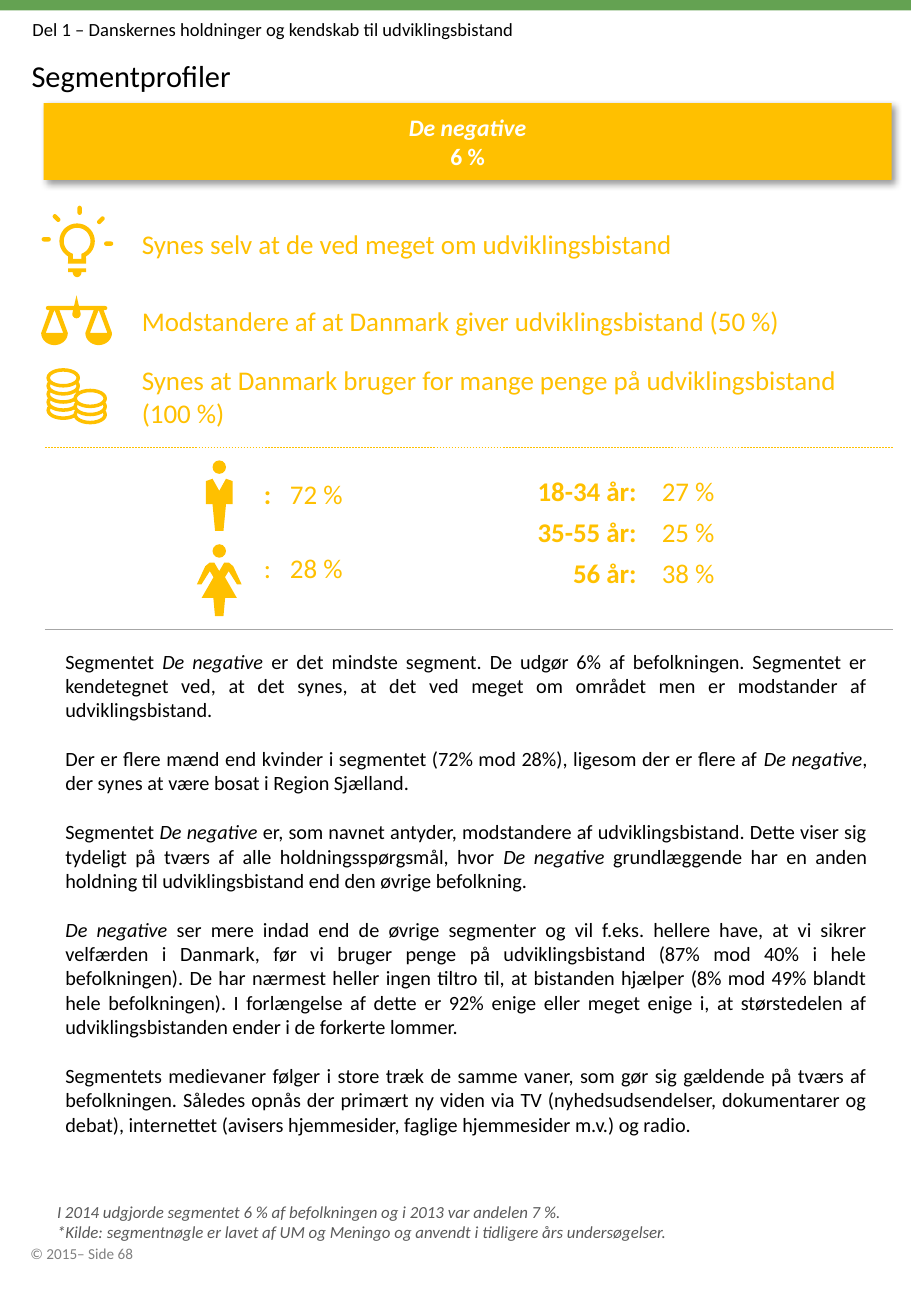
from dataclasses import dataclass
from math import cos, radians, sin

from lxml.etree import SubElement
from pptx import Presentation
from pptx.dml.color import RGBColor
from pptx.enum.dml import MSO_LINE
from pptx.enum.shapes import MSO_CONNECTOR, MSO_SHAPE
from pptx.enum.text import MSO_ANCHOR, PP_ALIGN
from pptx.oxml.ns import qn
from pptx.util import Pt


@dataclass(frozen=True)
class Theme:
    """Colours, font and type sizes of the slide."""

    font: str = "Calibri"
    green: RGBColor = RGBColor(0x64, 0xA2, 0x52)
    gold: RGBColor = RGBColor(0xFF, 0xC0, 0x00)
    white: RGBColor = RGBColor(0xFF, 0xFF, 0xFF)
    black: RGBColor = RGBColor(0, 0, 0)
    dark_grey: RGBColor = RGBColor(0x59, 0x59, 0x59)
    grey: RGBColor = RGBColor(0x80, 0x80, 0x80)
    light_grey: RGBColor = RGBColor(0xA6, 0xA6, 0xA6)
    title: int = 18
    fact: int = 16
    banner: int = 14
    body: int = 12
    header: int = 11
    note: int = 10
    footer: int = 9


THEME = Theme()
SEGMENT = "De negative"
FACTS = [
    (144.4, "Synes selv at de ved meget om udviklingsbistand"),
    (189.8, "Modstandere af at Danmark giver udviklingsbistand (50 %)"),
    (234.7, "Synes at Danmark bruger for mange penge på udviklingsbistand (100 %)"),
]
AGES = [("18-34 år:", "27 %"), ("35-55 år:", "25 %"), ("56 år:", "38 %")]
BODY = [
    "Segmentet De negative er det mindste segment. De udgør 6% af befolkningen. Segmentet er kendetegnet ved, at det synes, at det ved meget om området men er modstander af udviklingsbistand.",
    "Der er flere mænd end kvinder i segmentet (72% mod 28%), ligesom der er flere af De negative, der synes at være bosat i Region Sjælland.",
    "Segmentet De negative er, som navnet antyder, modstandere af udviklingsbistand. Dette viser sig tydeligt på tværs af alle holdningsspørgsmål, hvor De negative grundlæggende har en anden holdning til udviklingsbistand end den øvrige befolkning.",
    "De negative ser mere indad end de øvrige segmenter og vil f.eks. hellere have, at vi sikrer velfærden i Danmark, før vi bruger penge på udviklingsbistand (87% mod 40% i hele befolkningen). De har nærmest heller ingen tiltro til, at bistanden hjælper (8% mod 49% blandt hele befolkningen). I forlængelse af dette er 92% enige eller meget enige i, at størstedelen af udviklingsbistanden ender i de forkerte lommer.",
    "Segmentets medievaner følger i store træk de samme vaner, som gør sig gældende på tværs af befolkningen. Således opnås der primært ny viden via TV (nyhedsudsendelser, dokumentarer og debat), internettet (avisers hjemmesider, faglige hjemmesider m.v.) og radio.",
]
NOTES = [
    "I 2014 udgjorde segmentet 6 % af befolkningen og i 2013 var andelen 7 %.",
    "*Kilde: segmentnøgle er lavet af UM og Meningo og anvendt i tidligere års undersøgelser.",
]
MAN = [(0, 290.9), (4, 283.7), (7.9, 285.1), (7.9, 298.8), (4, 298.8), (2.5, 314.6)]
WOMAN = [(0, 338.4), (2.9, 333.4), (5.8, 333.4), (8.3, 335.5), (13.3, 346.3), (10.6, 346.3),
         (5.6, 338.4), (3.4, 342), (10.4, 354.2), (3.5, 354.2), (2.5, 365)]
BULB_RAYS = [(33.5, 129.2, 45), (27.4, 141.8, 0), (64.4, 144.4, 0), (59.8, 130.5, -45), (47.2, 124.6, 90)]


def write_paragraph(paragraph, runs, size, color, align=PP_ALIGN.LEFT, before=0):
    """Fill a paragraph with (text, bold, italic) runs."""
    paragraph.alignment = align
    paragraph.space_before = Pt(before)
    for text, bold, italic in runs:
        run = paragraph.add_run()
        run.text = text
        font = run.font
        font.name, font.size, font.bold, font.italic = THEME.font, Pt(size), bold, italic
        font.color.rgb = color


def add_text(slide, box, paragraphs, size, color, align=PP_ALIGN.LEFT,
             anchor=MSO_ANCHOR.TOP, inset=(7.2, 3.6), gap=0):
    """Add a wrapping text box with one list of runs per paragraph."""
    frame = slide.shapes.add_textbox(*map(Pt, box)).text_frame
    frame.word_wrap = True
    frame.vertical_anchor = anchor
    frame.margin_left = frame.margin_right = Pt(inset[0])
    frame.margin_top = frame.margin_bottom = Pt(inset[1])
    for index, runs in enumerate(paragraphs):
        paragraph = frame.add_paragraph() if index else frame.paragraphs[0]
        write_paragraph(paragraph, runs, size, color, align, gap if index else 0)
    return frame


def add_fact(slide, left, middle, width, runs, align=PP_ALIGN.LEFT, height=27):
    """Add gold fact text centred on a height."""
    box = (left, middle - height / 2, width, height)
    return add_text(slide, box, [runs], THEME.fact, THEME.gold, align, MSO_ANCHOR.MIDDLE)


def paint(shape, color):
    """Give a shape a plain fill without line or shadow."""
    shape.shadow.inherit = False
    shape.fill.solid()
    shape.fill.fore_color.rgb = color
    shape.line.fill.background()


def add_preset(slide, kind, box, color=THEME.gold):
    """Add a plain preset shape."""
    shape = slide.shapes.add_shape(kind, *map(Pt, box))
    paint(shape, color)
    return shape


def add_bar(slide, center_x, center_y, length, thickness, rotation=0):
    """Add a round-ended bar around a centre."""
    box = (center_x - length / 2, center_y - thickness / 2, length, thickness)
    shape = add_preset(slide, MSO_SHAPE.ROUNDED_RECTANGLE, box)
    shape.adjustments[0] = 0.5
    shape.rotation = rotation


def add_outline(slide, *contours):
    """Add one gold freeform; inner contours become holes."""
    points = [[(Pt(x), Pt(y)) for x, y in contour] for contour in contours]
    builder = slide.shapes.build_freeform(*points[0][0], scale=1.0)
    builder.add_line_segments(points[0][1:])
    for contour in points[1:]:
        builder.move_to(*contour[0])
        builder.add_line_segments(contour[1:])
    paint(builder.convert_to_shape(), THEME.gold)


def arc(center_x, center_y, radius_x, radius_y, start, end):
    """Return points along an elliptic arc, clockwise in degrees."""
    return [(center_x + radius_x * cos(radians(angle)), center_y + radius_y * sin(radians(angle)))
            for angle in range(start, end + 1, 10)]


def add_rule(slide, top, color, dash=None):
    """Add a hairline across the content."""
    line = slide.shapes.add_connector(MSO_CONNECTOR.STRAIGHT, Pt(26.6), Pt(top), Pt(529.2), Pt(top))
    line.line.color.rgb = color
    line.line.width = Pt(0.25)
    if dash:
        line.line.dash_style = dash
    SubElement(line._element.spPr, qn("a:effectLst"))


def add_banner(slide):
    """Add the segment banner with its soft shadow."""
    banner = add_preset(slide, MSO_SHAPE.RECTANGLE, (25.9, 61.2, 502.6, 45.4))
    effects = banner._element.spPr.find(qn("a:effectLst"))
    shadow = SubElement(effects, qn("a:outerShdw"), blurRad=str(Pt(4)), dist=str(Pt(3)),
                        dir="2700000", algn="tl", rotWithShape="0")
    color = SubElement(shadow, qn("a:srgbClr"), val=str(THEME.black))
    SubElement(color, qn("a:alpha"), val="40000")
    frame = banner.text_frame
    frame.vertical_anchor = MSO_ANCHOR.MIDDLE
    for paragraph, run in ((frame.paragraphs[0], (SEGMENT, True, True)),
                           (frame.add_paragraph(), ("6 %", True, False))):
        write_paragraph(paragraph, [run], THEME.banner, THEME.white, PP_ALIGN.CENTER)


def add_bulb(slide):
    """Draw the light bulb."""
    glass = arc(45.7, 142.9, 10.5, 10.5, 120, 420) + [(51.1, 156.2), (40.3, 156.2)]
    hollow = arc(45.7, 142.9, 7.9, 7.9, 120, 420) + [
        (48.2, 150.5), (48.2, 153.4), (43.2, 153.4), (43.2, 150.5)]
    add_outline(slide, glass, hollow)
    add_outline(slide, [(40.3, 159.1), (51.1, 159.1), (51.1, 161.3)]
                + arc(45.7, 161.3, 2.6, 2.9, 0, 180) + [(40.3, 161.3)])
    for center_x, center_y, rotation in BULB_RAYS:
        add_bar(slide, center_x, center_y, 5.4, 2.6, rotation)


def add_scales(slide):
    """Draw the balance scales."""
    add_bar(slide, 45.4, 182.5, 36.4, 2.4)
    add_outline(slide, [(45.4, 175)] + arc(45.4, 186.1, 2.5, 2.5, -20, 200))
    for center in (32.3, 58.5):
        pan = [(center - 2.9, 183.6), (center + 2.9, 183.6)] + arc(center, 197.3, 7.9, 7.2, 0, 180)
        add_outline(slide, pan, [(center, 183.6), (center + 5.2, 197.3), (center - 5.2, 197.3)])


def add_coins(slide, center, bottom, count):
    """Stack coins upwards from the lowest centre."""
    for index in range(count):
        middle = bottom - 4.8 * index
        coin = add_preset(slide, MSO_SHAPE.OVAL, (center - 8.9, middle - 4.7, 17.8, 9.4), THEME.white)
        coin.line.color.rgb = THEME.gold
        coin.line.width = Pt(2.1)


def add_person(slide, head_top, half_body, text_middle, runs):
    """Draw a symmetric figure with its share."""
    center = 130
    add_preset(slide, MSO_SHAPE.OVAL, (center - 4, head_top, 8, 8))
    right = [(center + x, y) for x, y in half_body]
    left = [(center - x, y) for x, y in reversed(half_body)]
    add_outline(slide, right + left)
    paragraph = add_fact(slide, 149.4, text_middle, 91.4, []).paragraphs[0]
    tabs = SubElement(paragraph._p.get_or_add_pPr(), qn("a:tabLst"))
    SubElement(tabs, qn("a:tab"), pos=str(Pt(15.4)), algn="l")
    write_paragraph(paragraph, runs, THEME.fact, THEME.gold)


def body_runs(text):
    """Split a text so that the segment name is italic."""
    first, *rest = text.split(SEGMENT)
    runs = [(first, False, False)]
    for piece in rest:
        runs += [(SEGMENT, False, True), (piece, False, False)]
    return [run for run in runs if run[0]]


def main():
    """Build the segment profile and save it."""
    presentation = Presentation()
    presentation.slide_width, presentation.slide_height = Pt(540), Pt(779.76)
    slide = presentation.slides.add_slide(presentation.slide_layouts[6])
    add_preset(slide, MSO_SHAPE.RECTANGLE, (0, 0, 540, 6.2), THEME.green)
    add_text(slide, (12.2, 7.2, 427, 20.9), [[("Del 1 – Danskernes holdninger og kendskab til udviklingsbistand", False, False)]],
             THEME.header, THEME.black)
    add_text(slide, (10.8, 29.5, 518.4, 25.9), [[("Segmentprofiler", False, False)]],
             THEME.title, THEME.black, inset=(7.9, 4.3))
    add_banner(slide)
    add_bulb(slide)
    add_scales(slide)
    add_coins(slide, 37.5, 243.1, 5)
    add_coins(slide, 53.5, 245.7, 3)
    for middle, text in FACTS:
        add_fact(slide, 77, middle, 456.5, [(text, False, False)])
    add_rule(slide, 265, THEME.gold, MSO_LINE.DASH)
    add_person(slide, 272.8, MAN, 292.7, [(":\t", True, False), ("72 %", False, False)])
    add_person(slide, 322.5, WOMAN, 336.6, [(":\t28 %", False, False)])
    for index, (age, share) in enumerate(AGES):
        middle = 290.6 + 24.4 * index
        add_fact(slide, 301, middle, 83.5, [(age, True, False)], PP_ALIGN.RIGHT)
        add_fact(slide, 385.2, middle, 83.5, [(share, False, False)])
    add_rule(slide, 373, THEME.light_grey)
    add_text(slide, (31.7, 380.9, 489.6, 312.5), [body_runs(text) for text in BODY],
             THEME.body, THEME.black, PP_ALIGN.JUSTIFY, gap=14.6)
    add_text(slide, (25.9, 707.8, 518.4, 19.4), [[(text, False, True)] for text in NOTES],
             THEME.note, THEME.dark_grey, inset=(7.9, 4.3))
    add_text(slide, (10.1, 733, 85.7, 19.4), [[("© 2015– Side 68", False, False)]],
             THEME.footer, THEME.grey, inset=(7.9, 4.3))
    presentation.save("out.pptx")


if __name__ == "__main__":
    main()
